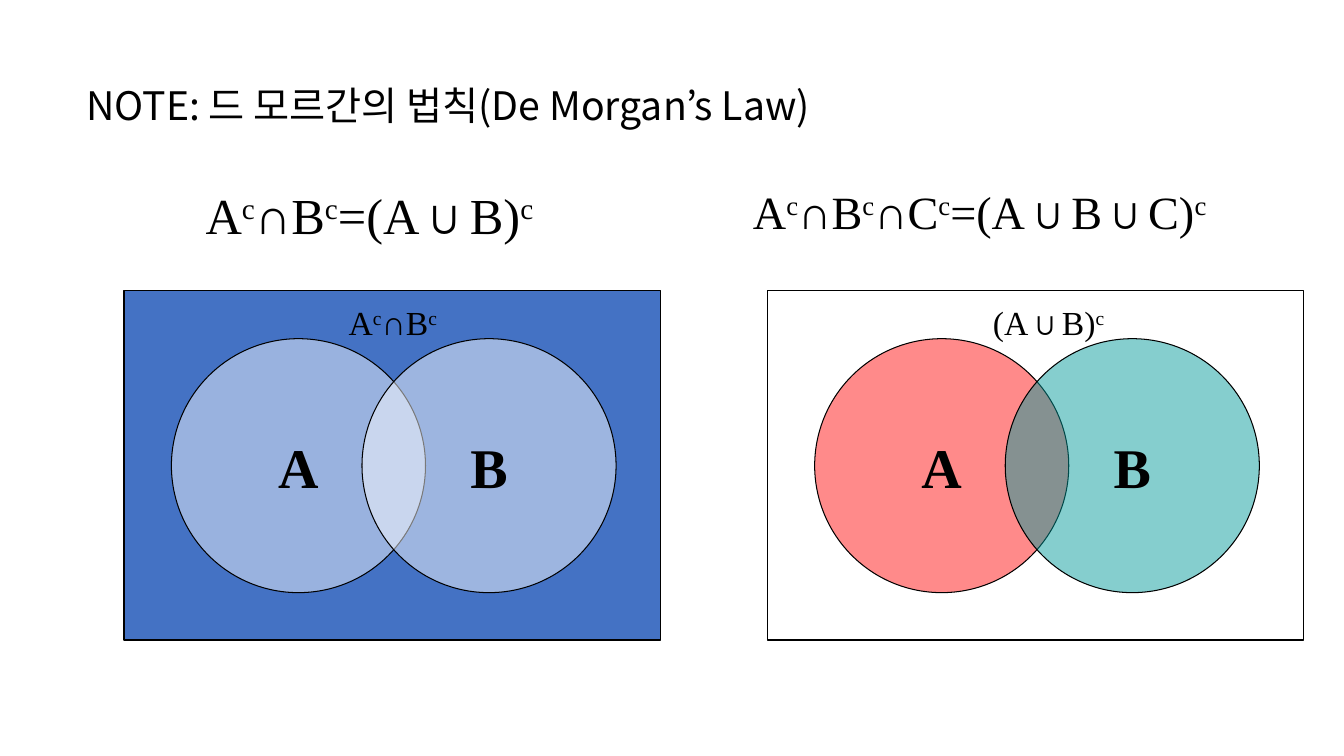
from lxml.etree import SubElement
from pptx import Presentation
from pptx.dml.color import RGBColor
from pptx.enum.shapes import MSO_SHAPE
from pptx.enum.text import MSO_ANCHOR, MSO_AUTO_SIZE, PP_ALIGN
from pptx.oxml.ns import qn
from pptx.util import Inches, Pt

BLACK = RGBColor(0x00, 0x00, 0x00)
WHITE = RGBColor(0xFF, 0xFF, 0xFF)
BLUE = RGBColor(0x44, 0x72, 0xC4)
RED = RGBColor(0xFF, 0x00, 0x00)
TEAL = RGBColor(0x00, 0x99, 0x99)

SERIF = "Times New Roman"
KOREAN = "Noto Sans CJK KR"

PANEL_TOP, PANEL_WIDTH, PANEL_HEIGHT = 2.88, 5.32, 3.47
DIAMETER = 2.52
CIRCLE_TOP = 0.48
CIRCLES = (("A", 0.47, 46), ("B", 2.36, 48))  # name, left inset, opacity in percent


def add_outlined(slide, kind, box, fill=None, opacity=100):
    shape = slide.shapes.add_shape(kind, *map(Inches, box))
    shape.shadow.inherit = False
    shape.line.color.rgb = BLACK
    shape.line.width = Pt(0.75)
    if fill is None:
        shape.fill.background()
        return shape
    shape.fill.solid()
    shape.fill.fore_color.rgb = fill
    if opacity < 100:
        color = shape.fill._xPr.find(".//" + qn("a:srgbClr"))
        SubElement(color, qn("a:alpha"), val=str(opacity * 1000))
    return shape


def style_font(font, size, name=SERIF, bold=False):
    font.size = Pt(size)
    font.name = name
    font.bold = bold
    font.color.rgb = BLACK


def add_text_box(slide, box, wrap=False):
    frame = slide.shapes.add_textbox(*map(Inches, box)).text_frame
    frame.word_wrap = wrap
    frame.auto_size = MSO_AUTO_SIZE.SHAPE_TO_FIT_TEXT
    return frame


def add_title(slide, box, text):
    paragraph = add_text_box(slide, box, wrap=True).paragraphs[0]
    run = paragraph.add_run()
    run.text = text
    style_font(run.font, 28, KOREAN)
    SubElement(run.font._element, qn("a:ea"), typeface=KOREAN)


def add_formula(slide, box, text, size, wrap=False):
    """Write a set formula in which every "^" stands for a raised c."""
    frame = add_text_box(slide, box, wrap)
    paragraph = frame.paragraphs[0]
    style_font(paragraph.font, size)
    for part in text.split("^")[:-1]:
        paragraph.add_run().text = part
        complement = paragraph.add_run()
        complement.text = "c"
        complement.font._element.set("baseline", "30000")
    return frame


def add_venn_panel(slide, left, background, circle_colors):
    add_outlined(slide, MSO_SHAPE.RECTANGLE,
                 (left, PANEL_TOP, PANEL_WIDTH, PANEL_HEIGHT), background)
    for (name, inset, opacity), color in zip(CIRCLES, circle_colors):
        box = (left + inset, PANEL_TOP + CIRCLE_TOP, DIAMETER, DIAMETER)
        circle = add_outlined(slide, MSO_SHAPE.OVAL, box, color, opacity)
        frame = circle.text_frame
        frame.word_wrap = False
        frame.vertical_anchor = MSO_ANCHOR.MIDDLE
        paragraph = frame.paragraphs[0]
        paragraph.text = name
        paragraph.alignment = PP_ALIGN.CENTER
        style_font(paragraph.font, 40, bold=True)


def main():
    presentation = Presentation()
    presentation.slide_width = Inches(13.33)
    presentation.slide_height = Inches(7.5)
    slide = presentation.slides.add_slide(presentation.slide_layouts[6])

    add_title(slide, (0.76, 0.76, 7.56, 0.57), "NOTE: 드 모르간의 법칙(De Morgan’s Law)")

    add_venn_panel(slide, 7.61, None, (RED, TEAL))
    add_formula(slide, (9.75, 2.95, 1.33, 0.5), "(A∪B)^", 24)

    add_venn_panel(slide, 1.23, BLUE, (WHITE, WHITE))
    add_formula(slide, (3.36, 2.95, 1.11, 0.5), "A^∩B^", 24)

    add_formula(slide, (1.94, 1.78, 3.54, 0.71), "A^∩B^=(A∪B)^", 36)
    three_sets = add_formula(slide, (7.37, 1.83, 4.97, 0.62),
                             "A^∩B^∩C^=(A∪B∪C)^", 33, wrap=True)
    three_sets.auto_size = MSO_AUTO_SIZE.NONE
    three_sets.vertical_anchor = MSO_ANCHOR.MIDDLE
    three_sets.paragraphs[0].line_spacing = 0.8

    presentation.save("out.pptx")


if __name__ == "__main__":
    main()
